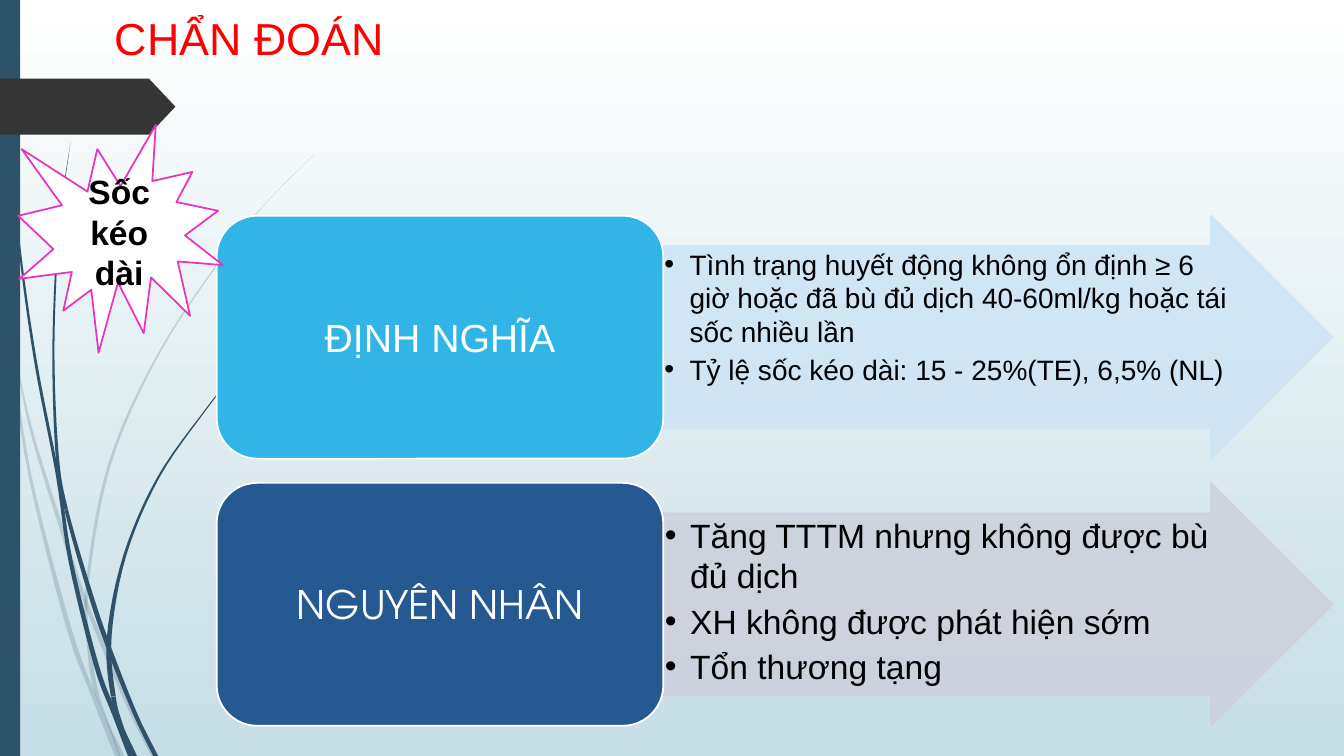
import pptx
import pptx.util
import pptx.dml.color
import pptx.enum.shapes
import pptx.enum.text
import pptx.oxml.ns
import lxml.etree

Pt = pptx.util.Pt
rgb = pptx.dml.color.RGBColor.from_string
kinds = pptx.enum.shapes.MSO_SHAPE
align = pptx.enum.text.PP_ALIGN
anchor = pptx.enum.text.MSO_ANCHOR
qn = pptx.oxml.ns.qn

theme = {
    "sky": "FFFFFF", "mist": "C5DEE5", "stem": "2E5369", "tag": "353535",
    "red": "FF0000", "pink": "E833BF", "white": "FFFFFF", "black": "000000",
    "blue": "31B4E6", "pale": "CEE5F5", "navy": "265991", "gray": "CDD1DC",
    "font": "Arial", "alt": "TeX Gyre Adventor",
    "title": 32, "card": 28, "big": 24, "small": 20,
}


def paint(shape, fill, line=None, alpha=100):
    shape.shadow.inherit = False
    shape.fill.solid()
    shape.fill.fore_color.rgb = rgb(theme[fill])
    if line:
        shape.line.color.rgb = rgb(theme[line])
        shape.line.width = Pt(1.25)
    else:
        shape.line.fill.background()
    if alpha < 100:
        for node in shape._element.spPr.iter(qn("a:srgbClr")):
            lxml.etree.SubElement(node, qn("a:alpha")).set("val", str(alpha * 1000))


def write(shape, lines, ink, size, pad, face="font", bold=False, mid=True, side=align.CENTER, dots=False):
    frame = shape.text_frame
    form = {"word_wrap": True, "vertical_anchor": anchor.MIDDLE if mid else anchor.TOP}
    form.update(zip(("margin_left", "margin_top", "margin_right", "margin_bottom"), map(Pt, pad)))
    for key, val in form.items():
        setattr(frame, key, val)
    for num, line in enumerate(lines):
        para = frame.add_paragraph() if num else frame.paragraphs[0]
        para.alignment = side
        run = para.add_run()
        run.text = line
        for key, val in {"name": theme[face], "size": Pt(theme[size]), "bold": bold}.items():
            setattr(run.font, key, val)
        run.font.color.rgb = rgb(theme[ink])
        if dots:
            para.space_after = Pt(theme[size] * 0.15)
            props = para._p.get_or_add_pPr()
            props.set("marL", str(Pt(18)))
            props.set("indent", str(-Pt(18)))
            lxml.etree.SubElement(props, qn("a:buFont")).set("typeface", theme["font"])
            lxml.etree.SubElement(props, qn("a:buChar")).set("char", "•")


deck = pptx.Presentation()
deck.slide_width, deck.slide_height = Pt(960), Pt(540)
slide = deck.slides.add_slide(deck.slide_layouts[6])
shapes = slide.shapes

back = slide.background.fill
back.gradient()
back.gradient_angle = 270
for stop, name, spot in zip(back.gradient_stops, ("sky", "mist"), (0, 1)):
    stop.color.rgb = rgb(theme[name])
    stop.position = spot

stems = [
    (20, [2, 5], [
        (0, 203, 0), (6, 232, 1), (8, 252, 1.5), (20, 338, 2.2), (47, 447, 3.5),
        (66, 499, 3.5), (82, 540, 7)]),
    (20, [3], [
        (10, 248, 0), (21, 306, 2), (42, 376, 3), (60, 431, 3), (88.5, 500, 3.5),
        (108, 540, 3.6)]),
    (20, [5, 7], [
        (224.5, 110, 0.3), (192.5, 142, 0.5), (164, 176, 1), (113.5, 251, 1.5),
        (77, 332, 2.2), (61, 420, 2.2), (62.5, 465, 3), (67, 493, 3), (75, 512, 1),
        (85, 540, 1)]),
    (100, [4, 7], [
        (2.2, 0, 0.7), (5, 79, 0.8), (12.2, 168, 1.4), (24, 256, 2), (40, 340, 2.3),
        (49, 401, 3), (67, 475, 3.6), (80, 510, 4), (91.4, 540, 6.5)]),
    (100, [4, 5, 7], [
        (50.4, 101.5, 0), (44.6, 139, 0.7), (40.3, 176, 1.2), (37.4, 251, 1.5),
        (39.6, 323, 2.2), (46, 364, 2.6), (63.4, 426, 3.4), (76.4, 464, 3.6),
        (95, 510, 3.2), (109.4, 540, 3.6)]),
    (100, [5, 6, 7], [
        (187.2, 247.5, 0.5), (166, 269, 0.7), (147, 292, 1), (112.3, 341, 1.7),
        (88, 397, 2.2), (76.4, 455, 3.3), (79.2, 497.5, 3.5), (87, 518, 1),
        (95.8, 540, 0)]),
]
steps = 6
for alpha, cuts, knots in stems:
    ends = [knots[0]] + knots + [knots[-1]]
    curve = []
    for a, b, c, d in zip(ends, ends[1:], ends[2:], ends[3:]):
        for step in range(steps):
            t = step / steps
            curve.append([
                q + t * (r - p) / 2 + t ** 2 * (2 * p - 5 * q + 4 * r - s) / 2
                + t ** 3 * (3 * q - p - 3 * r + s) / 2
                for p, q, r, s in zip(a, b, c, d)])
    curve.append(knots[-1])
    for first, last in zip([0] + cuts, cuts + [len(knots) - 1]):
        part = curve[first * steps:last * steps + 1]
        edge = [(Pt(x), Pt(y)) for x, y, w in part]
        edge += [(Pt(x + w), Pt(y)) for x, y, w in reversed(part)]
        pen = shapes.build_freeform(*edge[0])
        pen.add_line_segments(edge[1:], close=True)
        paint(pen.convert_to_shape(), "stem", alpha=alpha)

bar = shapes.add_shape(kinds.RECTANGLE, Pt(0), Pt(0), Pt(14.4), Pt(540))
paint(bar, "stem")
tag = shapes.add_shape(kinds.PENTAGON, Pt(0), Pt(56.2), Pt(125.3), Pt(40))
tag.adjustments[0] = 0.47
paint(tag, "tag")

title = shapes.add_textbox(Pt(74.9), Pt(0), Pt(218), Pt(55.4))
write(title, ["CHẨN ĐOÁN"], "red", "title", (7.2, 3.6, 7.2, 4.6), side=align.LEFT)

rows = [
    ("ĐỊNH NGHĨA", "font", "blue", "pale", "small", 0.7, [
        "Tình trạng huyết động không ổn định ≥ 6 giờ hoặc đã bù đủ dịch 40-60ml/kg hoặc tái sốc nhiều lần",
        "Tỷ lệ sốc kéo dài: 15 - 25%(TE), 6,5% (NL)"]),
    ("NGUYÊN NHÂN", "alt", "navy", "gray", "big", 1.2, [
        "Tăng TTTM nhưng không được bù đủ dịch",
        "XH không được phát hiện sớm",
        "Tổn thương tạng"]),
]
for num, (head, face, fill, tint, size, pad, lines) in enumerate(rows):
    top = Pt(154.1 + 190.8 * num)
    arrow = shapes.add_shape(kinds.RIGHT_ARROW, Pt(473.8), top, Pt(478), Pt(173.5))
    arrow.adjustments[0] = 0.75
    arrow.adjustments[1] = 0.5
    paint(arrow, tint, tint, 90)
    write(arrow, lines, "black", size, [pad] * 4, mid=False, side=align.LEFT, dots=True)
    card = shapes.add_shape(kinds.ROUNDED_RECTANGLE, Pt(154.8), top, Pt(319), Pt(173.5))
    paint(card, fill, "white")
    write(card, [head], "white", "card", (8.4, 4.2, 8.4, 4.2), face=face)

star = shapes.add_shape(kinds.EXPLOSION1, Pt(13), Pt(89.3), Pt(146.2), Pt(162.7))
paint(star, "white", "pink")
write(star, ["Sốc kéo dài"], "black", "big", (7.2, 3.6, 7.2, 3.6), bold=True)

deck.save("out.pptx")
